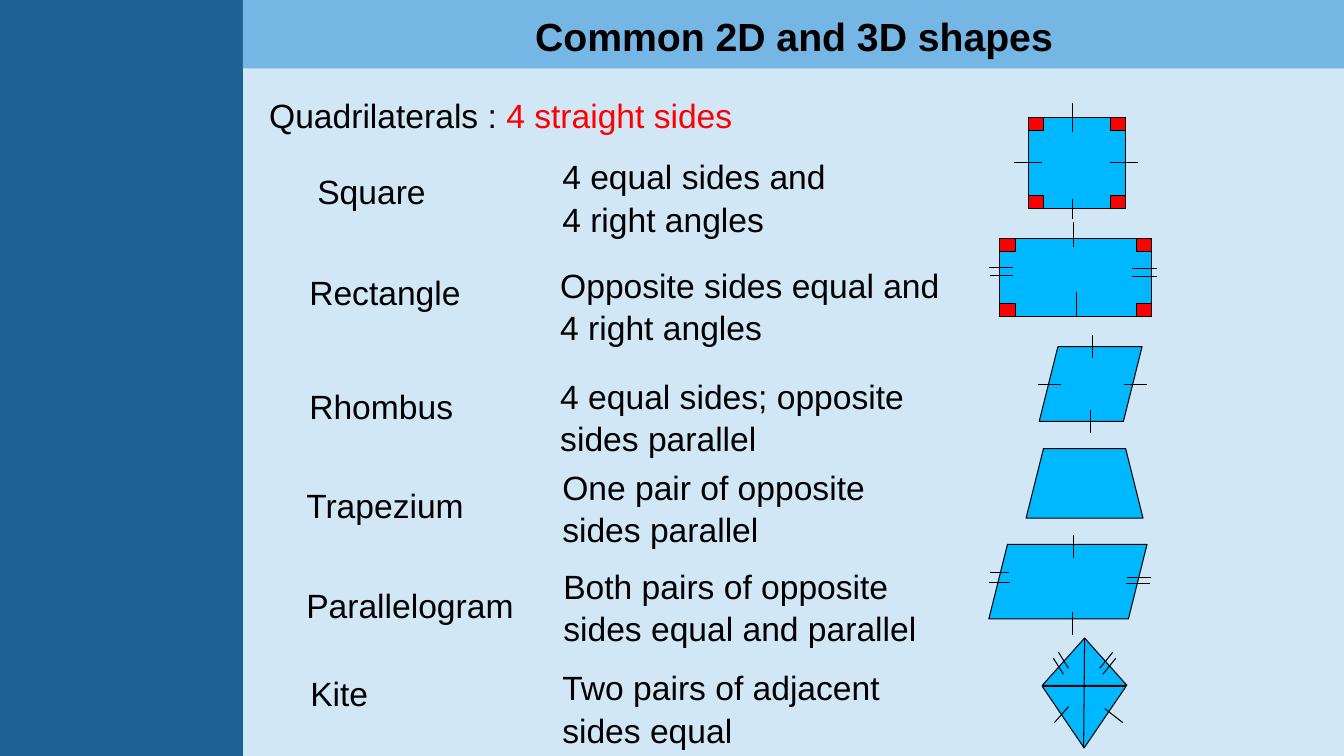
import dataclasses
import lxml.etree
import pptx
import pptx.dml.color
import pptx.enum.shapes
import pptx.enum.text
import pptx.oxml.ns
import pptx.util

SHAPE = pptx.enum.shapes.MSO_SHAPE
ALIGN = pptx.enum.text.PP_ALIGN


@dataclasses.dataclass(frozen=True)
class Theme:
    background: str = "D1E7F6"
    sidebar: str = "1D6294"
    banner: str = "75B6E5"
    figure: str = "00B8FF"
    accent: str = "FF0000"
    ink: str = "000000"
    font: str = "Arial"
    title_size: int = 28
    text_size: int = 24
    line_width: float = 0.75
    line_spacing: float = 1.05
    columns: float = 133.33
    rows: int = 75
    cell: float = 0.1


THEME = Theme()


def color(value):
    return pptx.dml.color.RGBColor.from_string(value)


def write_text(shape, text, accent="", size=THEME.text_size, bold=False, align=ALIGN.LEFT):
    frame = shape.text_frame
    frame.word_wrap = True
    frame.auto_size = pptx.enum.text.MSO_AUTO_SIZE.NONE
    frame.vertical_anchor = pptx.enum.text.MSO_ANCHOR.TOP
    frame.text = text
    for paragraph in frame.paragraphs:
        paragraph.alignment = align
        paragraph.line_spacing = THEME.line_spacing
        paragraph.space_before = pptx.util.Pt(0)
    if accent:
        frame.paragraphs[-1].add_run().text = accent
    for paragraph in frame.paragraphs:
        for run in paragraph.runs:
            run.font.name = THEME.font
            run.font.size = pptx.util.Pt(size)
            run.font.bold = bold
            run.font.color.rgb = color(THEME.accent if run.text == accent else THEME.ink)


class ShapeSlide:
    def __init__(self, presentation, theme):
        self.theme = theme
        presentation.slide_width = self.length(theme.columns)
        presentation.slide_height = self.length(theme.rows)
        self.slide = presentation.slides.add_slide(presentation.slide_layouts[1])
        self.slide.background.fill.solid()
        self.slide.background.fill.fore_color.rgb = color(theme.background)

    def length(self, cells):
        return pptx.util.Inches(cells * self.theme.cell)

    def box(self, *cells):
        return [self.length(value) for value in cells]

    def placeholder(self, index, place, text, **text_format):
        shape = self.slide.placeholders[index]
        shape.left, shape.top, shape.width, shape.height = self.box(*place)
        write_text(shape, text, **text_format)
        for properties in shape.element.iter(pptx.oxml.ns.qn("a:pPr")):
            properties.set("marL", "0")
            properties.set("indent", "0")
            lxml.etree.SubElement(properties, pptx.oxml.ns.qn("a:buNone"))

    def text(self, place, text, **text_format):
        write_text(self.slide.shapes.add_textbox(*self.box(*place)), text, **text_format)

    def figure(self, kind, place, fill, outlined=True, rotation=0):
        shape = self.slide.shapes.add_shape(kind, *self.box(*place))
        shape.shadow.inherit = False
        shape.rotation = rotation
        shape.fill.solid()
        shape.fill.fore_color.rgb = color(fill)
        if outlined:
            shape.line.color.rgb = color(self.theme.ink)
            shape.line.width = pptx.util.Pt(self.theme.line_width)
        else:
            shape.line.fill.background()
        return shape

    def band(self, place, fill):
        element = self.figure(SHAPE.RECTANGLE, place, fill, outlined=False).element
        element.getparent().insert(2, element)

    def line(self, left, top, across, down):
        connector = self.slide.shapes.add_connector(
            pptx.enum.shapes.MSO_CONNECTOR.STRAIGHT,
            *self.box(left, top, left + across, top + down))
        connector.line.color.rgb = color(self.theme.ink)
        connector.line.width = pptx.util.Pt(self.theme.line_width)
        lxml.etree.SubElement(connector.element.spPr, pptx.oxml.ns.qn("a:effectLst"))

    def right_angles(self, left, top, width, height):
        side, rise = 1.5, 1.3
        for x in (left, left + width - side):
            for y in (top, top + height - rise):
                self.figure(SHAPE.RECTANGLE, (x, y, side, rise), self.theme.accent)


QUADRILATERALS = [
    ("Square", 30.5, 16.3, "4 equal sides and\n4 right angles", 54.8, 14.8),
    ("Rectangle", 29.7, 26.3, "Opposite sides equal and\n4 right angles", 54.6, 25.6),
    ("Rhombus", 29.7, 37.6, "4 equal sides; opposite\nsides parallel", 54.6, 36.6),
    ("Trapezium", 29.4, 47.4, "One pair of opposite\nsides parallel", 54.8, 45.6),
    ("Parallelogram", 29.4, 57.3, "Both pairs of opposite\nsides equal and parallel", 54.9, 55.4),
    ("Kite", 29.8, 66.1, "Two pairs of adjacent\nsides equal", 54.8, 65.5),
]

SQUARE = (102, 11.7, 9.7, 9)
RECTANGLE = (99.2, 23.7, 15, 7.7)

FIGURES = [
    (SHAPE.RECTANGLE, SQUARE, 0),
    (SHAPE.RECTANGLE, RECTANGLE, 0),
    (SHAPE.PARALLELOGRAM, (103.1, 34.4, 10.2, 7.4), 0),
    (SHAPE.TRAPEZOID, (101.8, 44.5, 11.6, 6.9), 0),
    (SHAPE.PARALLELOGRAM, (98.1, 54, 15.7, 7.4), 0),
    (SHAPE.ISOSCELES_TRIANGLE, (103.4, 63.3, 8.4, 4.7), 0),
    (SHAPE.ISOSCELES_TRIANGLE, (103.4, 68.1, 8.3, 6.1), 180),
]

VERTICAL_MARKS = [
    (106.4, 10.2, 2.9), (106.4, 19.7, 2),
    (106.5, 22, 2.5), (106.8, 29, 2.4),
    (108.4, 33.2, 2.3), (108.2, 40.7, 2.3),
    (106.5, 53.1, 2.3), (106.4, 60.7, 2.3),
]

HORIZONTAL_MARKS = [
    (100.6, 16.1, 2.8), (110.1, 16.1, 2.8),
    (98.1, 26.5, 2.4), (98.2, 27.3, 2.3),
    (112.3, 26.6, 2.5), (112.3, 27.4, 2.5),
    (103, 38.1, 2.3), (111.5, 38.1, 2.3),
    (98.2, 56.8, 1.9), (98.1, 57.8, 2.1),
    (111.8, 57.3, 2.4), (111.7, 57.9, 2.4),
]

KITE_LINES = [
    (107.6, 63.3, -0.1, 10.9),
    (104.5, 65.3, 1, 1.6), (105, 64.7, 1, 1.6),
    (109.4, 66.9, 1.3, -1.6), (109.1, 66.3, 1.3, -1.6),
    (104.6, 71.7, 1.4, -1.6), (109.6, 70.3, 1.8, 1.4),
]


def main():
    presentation = pptx.Presentation()
    page = ShapeSlide(presentation, THEME)
    page.band((24.1, 0, 109.23, 6.8), THEME.banner)
    page.band((0, 0, 24.1, THEME.rows), THEME.sidebar)
    page.placeholder(0, (24.2, 0.5, 109.13, 5.7), "Common 2D and 3D shapes",
                     size=THEME.title_size, bold=True, align=ALIGN.CENTER)
    page.placeholder(1, (25.7, 8.7, 106.3, 6), "Quadrilaterals : ",
                     accent="4 straight sides")
    for name, left, top, description, description_left, description_top in QUADRILATERALS:
        page.text((left, top, 25, 5), name)
        page.text((description_left, description_top, 43, 9.1), description)
    for kind, place, rotation in FIGURES:
        page.figure(kind, place, THEME.figure, rotation=rotation)
    for left, top, height in VERTICAL_MARKS:
        page.line(left, top, 0, height)
    for left, top, width in HORIZONTAL_MARKS:
        page.line(left, top, width, 0)
    for kite_line in KITE_LINES:
        page.line(*kite_line)
    for place in (SQUARE, RECTANGLE):
        page.right_angles(*place)
    presentation.save("out.pptx")


if __name__ == "__main__":
    main()
